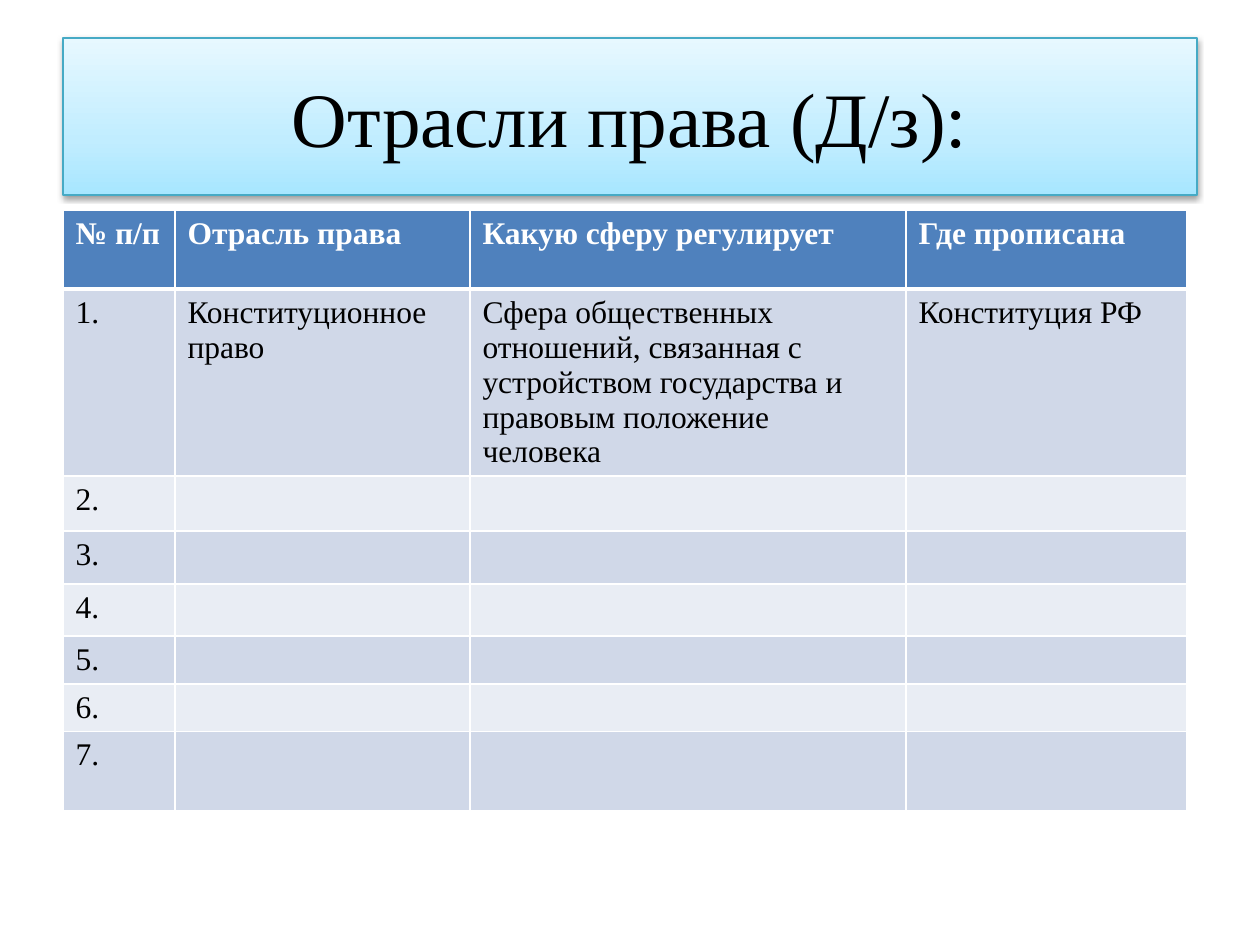
from copy import deepcopy

from lxml import etree
from pptx import Presentation
from pptx.dml.color import RGBColor
from pptx.enum.text import MSO_ANCHOR, PP_ALIGN
from pptx.oxml import parse_xml
from pptx.oxml.ns import nsdecls, qn
from pptx.util import Pt

MIDDLE = MSO_ANCHOR.MIDDLE
CENTER = PP_ALIGN.CENTER
PX = 914400 // 126
FONT = "Times New Roman"
COLORS = {
    "white": "FFFFFF", "black": "000000", "edge": "46AAC5", "head": "4F81BD",
    "odd": "D0D8E8", "even": "E9EDF4",
    "deep": "A7E6FF", "mid": "C1EDFF", "pale": "E7F8FF",
}
STOPS = [("deep", 0), ("mid", 0.35), ("pale", 1)]
COLS = [112, 295, 436, 281]
ROWS = [79, 186, 55, 53, 52, 48, 47, 79]
HEAD = ["№ п/п", "Отрасль права", "Какую сферу регулирует", "Где прописана"]
FIRST = [
    "1.", "Конституционное право",
    "Сфера общественных отношений, связанная с устройством государства "
    "и правовым положение человека",
    "Конституция РФ",
]


def px(count):
    return count * PX


def color(name):
    return RGBColor.from_string(COLORS[name])


def set_font(para, size, name, bold=False):
    font = para.font
    font.name, font.size, font.bold = FONT, Pt(size), bold
    font.color.rgb = color(name)


def fill_title(shape):
    """Give the title its three-stop gradient, running from bottom to top."""
    fill = shape.fill
    fill.gradient()
    fill.gradient_angle = 90
    stops = shape._element.spPr.find(".//" + qn("a:gsLst"))
    stops.append(deepcopy(stops[0]))
    for stop, (name, place) in zip(fill.gradient_stops, STOPS):
        stop.color.rgb = color(name)
        stop.position = place


def add_shadow(shape):
    shape._element.spPr.append(parse_xml(
        f'<a:effectLst {nsdecls("a")}>'
        '<a:outerShdw blurRad="40000" dist="20000" dir="5400000" rotWithShape="0">'
        f'<a:srgbClr val="{COLORS["black"]}"><a:alpha val="38000"/></a:srgbClr>'
        '</a:outerShdw></a:effectLst>'))


def set_title(slide, text):
    title = slide.shapes.title
    title.left, title.top = px(63), px(38)
    title.width, title.height = px(1134), px(157)
    fill_title(title)
    title.line.color.rgb = color("edge")
    title.line.width = Pt(0.75)
    add_shadow(title)
    frame = title.text_frame
    frame.text = text
    frame.vertical_anchor = MIDDLE
    para = frame.paragraphs[0]
    para.alignment = CENTER
    set_font(para, 44, "black")


def set_edges(cell, base):
    """Draw white borders; base is the width of the bottom one in points."""
    props = cell._tc.get_or_add_tcPr()
    for spot, (side, width) in enumerate(
            [("L", 1), ("R", 1), ("T", 1), ("B", base)]):
        props.insert(spot, parse_xml(
            f'<a:ln{side} {nsdecls("a")} w="{Pt(width)}"><a:solidFill>'
            f'<a:srgbClr val="{COLORS["white"]}"/></a:solidFill></a:ln{side}>'))


def set_cell(cell, text, row):
    head = row == 0
    para = cell.text_frame.paragraphs[0]
    para.text = text
    set_font(para, 18, "white" if head else "black", head)
    if not text:
        end = etree.SubElement(para._p, qn("a:endParaRPr"), sz="1800")
        etree.SubElement(end, qn("a:latin"), typeface=FONT)
    cell.fill.solid()
    cell.fill.fore_color.rgb = color(
        "head" if head else "odd" if row % 2 else "even")
    set_edges(cell, 3 if head else 1)


def add_grid(slide):
    frame = slide.shapes.add_table(
        len(ROWS), len(COLS), px(63), px(210), px(sum(COLS)), px(sum(ROWS)))
    table = frame.table
    for col, width in zip(table.columns, COLS):
        col.width = px(width)
    blank = [""] * (len(COLS) - 1)
    lines = [HEAD, FIRST] + [[f"{n}.", *blank] for n in range(2, len(ROWS))]
    for i, (height, line) in enumerate(zip(ROWS, lines)):
        table.rows[i].height = px(height)
        for j, text in enumerate(line):
            set_cell(table.cell(i, j), text, i)


def main():
    deck = Presentation()
    deck.slide_width, deck.slide_height = px(1260), px(945)
    slide = deck.slides.add_slide(deck.slide_layouts[5])
    set_title(slide, "Отрасли права (Д/з):")
    add_grid(slide)
    deck.save("out.pptx")


if __name__ == "__main__":
    main()
